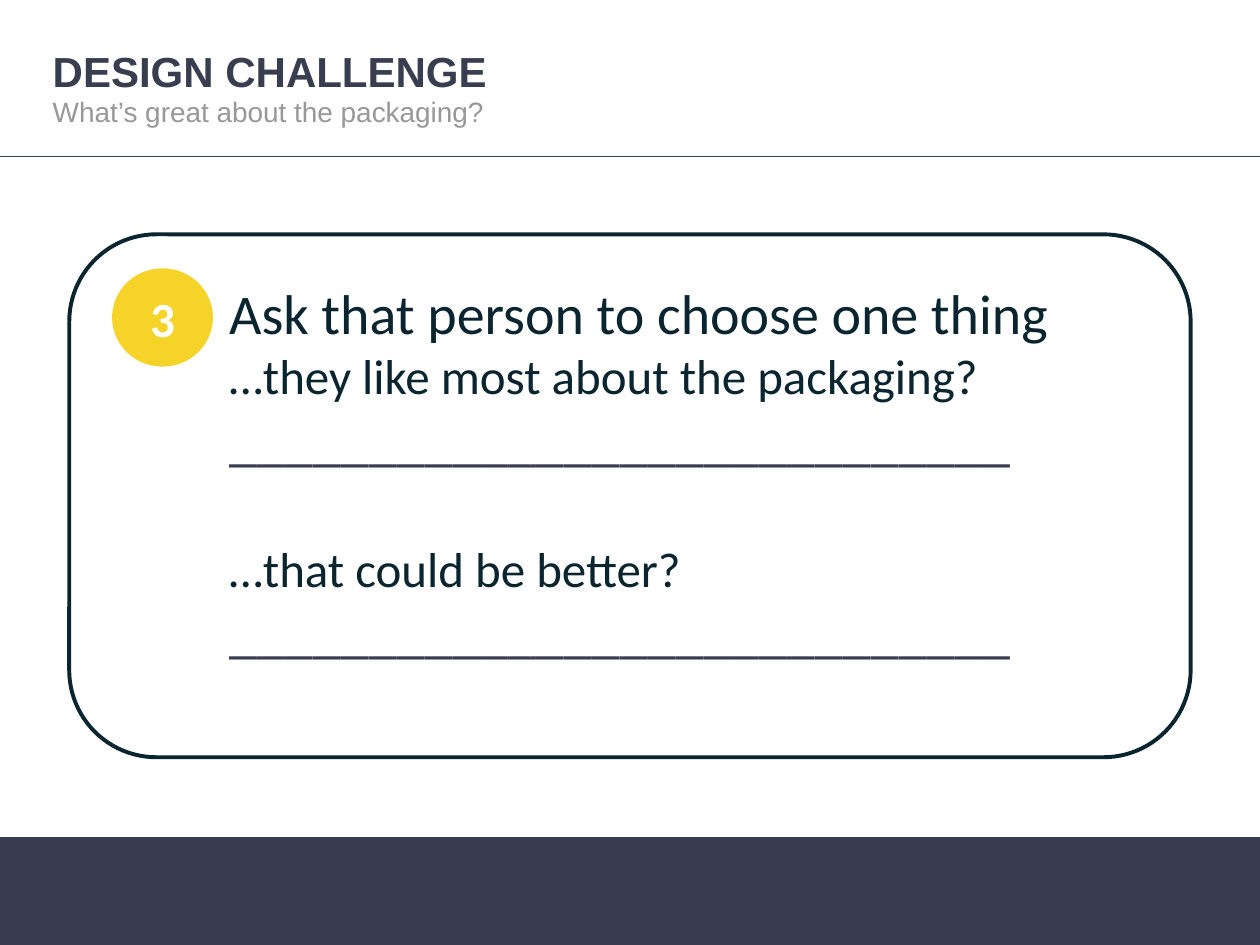
from pptx import Presentation
from pptx.dml.color import RGBColor
from pptx.enum.shapes import MSO_CONNECTOR as Connector, MSO_SHAPE as Shape
from pptx.enum.text import MSO_ANCHOR as Anchor, PP_ALIGN as Align
from pptx.oxml.ns import qn
from pptx.util import Inches, Pt
from lxml.etree import SubElement

SLATE = RGBColor(0x38, 0x3E, 0x4F)
RULE = RGBColor(0x38, 0x3D, 0x4F)
INK = RGBColor(0x0A, 0x25, 0x2F)
GRAY = RGBColor(0x98, 0x98, 0x98)
YELLOW = RGBColor(0xF5, 0xD3, 0x28)
WHITE = RGBColor(0xFF, 0xFF, 0xFF)

TITLE = {"name": "Arial", "size": Pt(24), "bold": True, "color": SLATE}
SUBTITLE = {"name": "Arial", "size": Pt(16), "color": GRAY}
HEADING = {"name": "Calibri", "size": Pt(32), "color": INK}
PROMPT = {**HEADING, "size": Pt(28)}
ANSWER = {**HEADING, "color": RULE}
NUMBER = {**PROMPT, "bold": True, "color": WHITE}

ANSWER_LINE = "_" * 28


class SlideBuilder:
    def __init__(self, slide):
        self.shapes = slide.shapes

    def add_words(self, paragraph, text, style, layout=None):
        run = paragraph.add_run()
        run.text = text
        for name, value in style.items():
            if name == "color":
                run.font.color.rgb = value
            else:
                setattr(run.font, name, value)
        for name, value in (layout or {}).items():
            setattr(paragraph, name, value)

    def text(self, box, lines):
        frame = self.shapes.add_textbox(*map(Inches, box)).text_frame
        frame.word_wrap = True
        for index, line in enumerate(lines):
            paragraph = frame.add_paragraph() if index else frame.paragraphs[0]
            self.add_words(paragraph, *line)

    def shape(self, kind, box, fill, line=None, width=0.75):
        shape = self.shapes.add_shape(kind, *map(Inches, box))
        shape.shadow.inherit = False
        shape.fill.solid()
        shape.fill.fore_color.rgb = fill
        if line is None:
            shape.line.fill.background()
        else:
            shape.line.color.rgb = line
            shape.line.width = Pt(width)
        return shape

    def badge(self, box, label):
        frame = self.shape(Shape.OVAL, box, YELLOW).text_frame
        frame.vertical_anchor = Anchor.MIDDLE
        self.add_words(frame.paragraphs[0], label, NUMBER, {"alignment": Align.CENTER})

    def line(self, start, end, color, width):
        connector = self.shapes.add_connector(
            Connector.STRAIGHT, *map(Inches, (*start, *end)))
        connector.line.color.rgb = color
        connector.line.width = Pt(width)
        SubElement(connector.element.spPr, qn("a:effectLst"))


def main():
    presentation = Presentation()
    presentation.slide_width = Inches(10)
    presentation.slide_height = Inches(7.5)
    slide = presentation.slides.add_slide(presentation.slide_layouts[6])
    builder = SlideBuilder(slide)

    builder.shape(Shape.RECTANGLE, (0, 6.65, 10, 0.85), SLATE, SLATE)
    builder.line((0, 1.24), (10, 1.24), SLATE, 0.75)
    builder.text((0.32, 0.31, 6.11, 0.95), [("DESIGN CHALLENGE", TITLE)])
    builder.text((0.32, 0.7, 5.48, 0.7),
                 [("What’s great about the packaging?", SUBTITLE)])

    builder.shape(Shape.ROUNDED_RECTANGLE, (0.55, 1.86, 8.9, 4.15), WHITE, INK, 2.25)
    builder.text((1.72, 2.16, 7.05, 3.13), [
        ("Ask that person to choose one thing", HEADING),
        ("…they like most about the packaging?", PROMPT),
        (ANSWER_LINE, ANSWER),
        ("…that could be better?", PROMPT, {"space_before": Pt(38)}),
        (ANSWER_LINE, ANSWER),
    ])
    builder.badge((0.89, 2.13, 0.8, 0.78), "3")

    presentation.save("out.pptx")


if __name__ == "__main__":
    main()
